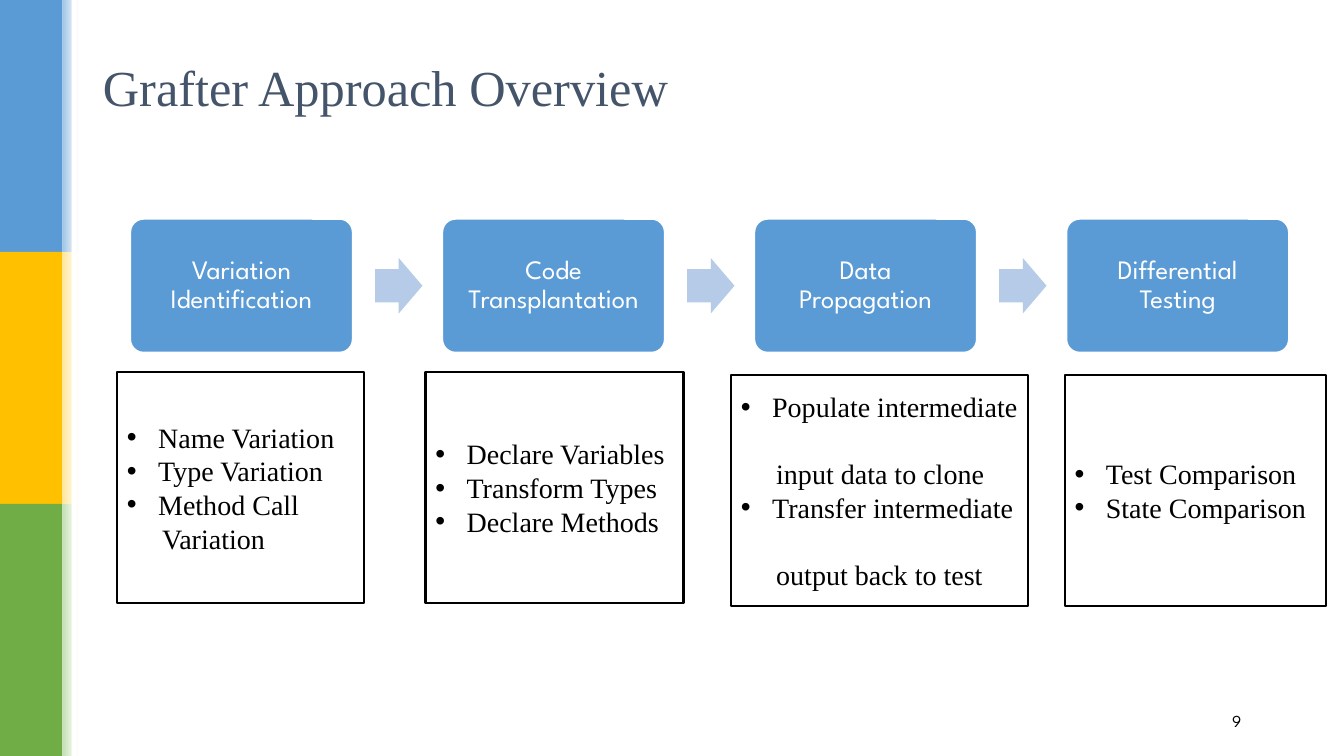
"""Build the Grafter approach overview slide."""
import pptx
import pptx.util
import pptx.dml.color
import pptx.enum.shapes
import pptx.enum.text
import lxml.etree

TITLE = "Grafter Approach Overview"
PAGE = "9"
STEPS = [
    {"name": "Variation Identification", "left": 1.16, "top": 3.69, "wide": 2.45, "gap": 0,
     "notes": [("Name Variation",), ("Type Variation",), ("Method Call", "Variation")]},
    {"name": "Code Transplantation", "left": 4.22, "top": 3.69, "wide": 2.56, "gap": 0,
     "notes": [("Declare Variables",), ("Transform Types",), ("Declare Methods",)]},
    {"name": "Data Propagation", "left": 7.25, "top": 3.72, "wide": 2.95, "gap": 24,
     "notes": [("Populate intermediate", "input data to clone"),
               ("Transfer intermediate", "output back to test")]},
    {"name": "Differential Testing", "left": 10.56, "top": 3.72, "wide": 2.59, "gap": 0,
     "notes": [("Test Comparison",), ("State Comparison",)]},
]
THEME = {
    "bands": [("5B9BD5", "9DC3E6"), ("FFC000", "FFE699"), ("70AD47", "C5E0B4")],
    "title": "44546A", "card": "5B9BD5", "arrow": "B5CBE7",
    "white": "FFFFFF", "black": "000000",
    "serif": "Times New Roman", "sans": "League Spartan",
    "big": 36, "note": 20, "step": 19, "small": 12,
}
WIDE, HIGH = 13.33, 7.5
BAND, FADE = 0.62, 0.16
START, PITCH = 1.29, 3.095
CARD_W, CARD_H, CARD_TOP = 2.21, 1.33, 2.17
ARROW_W, ARROW_H, ARROW_IN = 0.47, 0.55, 2.43
NOTE_H = 2.29
HANG, INNER = 0.31, 0.35

SHAPE = pptx.enum.shapes.MSO_SHAPE
ALIGN = pptx.enum.text.PP_ALIGN
INCH = pptx.util.Inches
NS = "{http://schemas.openxmlformats.org/drawingml/2006/main}"


def color(code):
    return pptx.dml.color.RGBColor.from_string(code)


def draw(slide, kind, box, fill, line=None):
    shape = slide.shapes.add_shape(kind, *map(INCH, box))
    shape.shadow.inherit = False
    shape.fill.solid()
    shape.fill.fore_color.rgb = color(fill)
    if line:
        shape.line.color.rgb = color(line)
        shape.line.width = pptx.util.Pt(1.5)
    else:
        shape.line.fill.background()
    return shape


def write(shape, lines, *, size, font, ink, align=ALIGN.LEFT, space=None, inset=0.1, right=0.1, gap=0):
    """Fill a shape with (text, role) lines; role is plain, bullet or more."""
    frame = shape.text_frame
    frame.word_wrap = True
    frame.vertical_anchor = pptx.enum.text.MSO_ANCHOR.MIDDLE
    frame.margin_left, frame.margin_right = INCH(inset), INCH(right)
    for i, (text, role) in enumerate(lines):
        para = frame.paragraphs[0] if i == 0 else frame.add_paragraph()
        para.alignment = align
        if space:
            para.line_spacing = space
        if role == "more":
            para.space_before = pptx.util.Pt(gap)
        props = para._p.get_or_add_pPr()
        if role == "bullet":
            props.set("marL", str(INCH(HANG)))
            props.set("indent", str(-INCH(HANG)))
            lxml.etree.SubElement(props, NS + "buFont", typeface="Arial")
            lxml.etree.SubElement(props, NS + "buChar", char="•")
        elif role == "more":
            props.set("marL", str(INCH(INNER)))
            props.set("indent", "0")
        run = para.add_run()
        run.text = text
        run.font.size = pptx.util.Pt(size)
        run.font.name = font
        run.font.color.rgb = color(ink)


def stripe(slide):
    tall = HIGH / len(THEME["bands"])
    for i, (solid, pale) in enumerate(THEME["bands"]):
        draw(slide, SHAPE.RECTANGLE, (0, i * tall, BAND, tall), solid)
        fade = draw(slide, SHAPE.RECTANGLE, (BAND, i * tall, FADE, tall), pale)
        fade.fill.gradient()
        fade.fill.gradient_angle = 0
        for stop, code in zip(fade.fill.gradient_stops, (pale, THEME["white"])):
            stop.color.rgb = color(code)
    draw(slide, SHAPE.RECTANGLE, (0.71, 0, 0.05, HIGH), THEME["white"])


def flow(slide):
    for i, step in enumerate(STEPS):
        left = START + i * PITCH
        card = draw(slide, SHAPE.ROUNDED_RECTANGLE, (left, CARD_TOP, CARD_W, CARD_H),
                    THEME["card"], THEME["white"])
        card.adjustments[0] = 0.1
        write(card, [(step["name"], "plain")], size=THEME["step"], font=THEME["sans"],
              ink=THEME["white"], align=ALIGN.CENTER, space=0.9, inset=0.12, right=0.12)
        if i < len(STEPS) - 1:
            top = CARD_TOP + (CARD_H - ARROW_H) / 2
            arrow = draw(slide, SHAPE.RIGHT_ARROW,
                         (left + ARROW_IN, top, ARROW_W, ARROW_H), THEME["arrow"])
            arrow.adjustments[0] = 0.6


def detail(slide):
    for step in STEPS:
        box = draw(slide, SHAPE.RECTANGLE, (step["left"], step["top"], step["wide"], NOTE_H),
                   THEME["white"], THEME["black"])
        lines = [(text, "more" if j else "bullet")
                 for note in step["notes"] for j, text in enumerate(note)]
        write(box, lines, size=THEME["note"], font=THEME["serif"], ink=THEME["black"],
              right=0, gap=step["gap"])


def main():
    deck = pptx.Presentation()
    deck.slide_width, deck.slide_height = INCH(WIDE), INCH(HIGH)
    slide = deck.slides.add_slide(deck.slide_layouts[5])
    stripe(slide)
    title = slide.shapes.title
    title.left, title.top, title.width, title.height = map(INCH, (0.92, 0.13, 11.5, 1.45))
    write(title, [(TITLE, "plain")], size=THEME["big"], font=THEME["serif"], ink=THEME["title"])
    flow(slide)
    detail(slide)
    page = slide.shapes.add_textbox(*map(INCH, (8.83, 6.95, 3.58, 0.4)))
    write(page, [(PAGE, "plain")], size=THEME["small"], font=THEME["sans"],
          ink=THEME["black"], align=ALIGN.RIGHT)
    deck.save("out.pptx")


if __name__ == "__main__":
    main()
